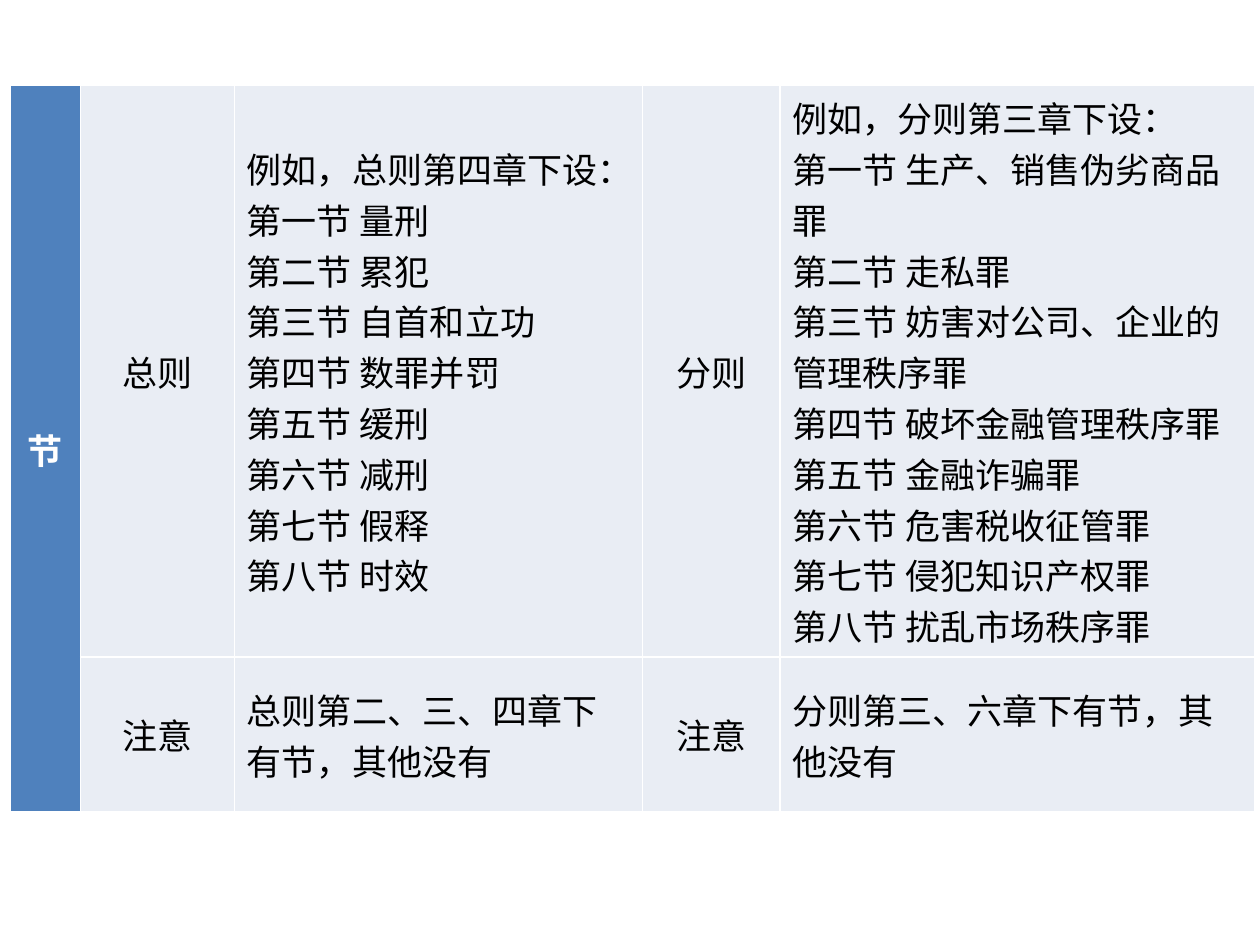
from lxml.etree import SubElement
from pptx import Presentation
from pptx.dml.color import RGBColor
from pptx.enum.text import MSO_ANCHOR, PP_ALIGN
from pptx.oxml.ns import qn
from pptx.util import Inches, Pt

FONT = "Noto Sans CJK SC"
COLORS = {"heading": "4F81BD", "body": "E9EDF4", "border": "FFFFFF",
          "heading_text": "FFFFFF", "body_text": "000000"}

# Content: each row is a list of cells, each cell a list of paragraphs
GENERAL_SECTIONS = [
    "例如，总则第四章下设：第一节 量刑",
    "第二节 累犯",
    "第三节 自首和立功",
    "第四节 数罪并罚",
    "第五节 缓刑",
    "第六节 减刑",
    "第七节 假释",
    "第八节 时效",
]
SPECIFIC_SECTIONS = [
    "例如，分则第三章下设：",
    "第一节 生产、销售伪劣商品罪",
    "第二节 走私罪",
    "第三节 妨害对公司、企业的管理秩序罪",
    "第四节 破坏金融管理秩序罪",
    "第五节 金融诈骗罪",
    "第六节 危害税收征管罪",
    "第七节 侵犯知识产权罪",
    "第八节 扰乱市场秩序罪",
]
ROWS = [
    [["节"], ["总则"], GENERAL_SECTIONS, ["分则"], SPECIFIC_SECTIONS],
    [None, ["注意"], ["总则第二、三、四章下有节，其他没有"],
     ["注意"], ["分则第三、六章下有节，其他没有"]],
]
COLUMN_WIDTHS = [0.56, 1.22, 3.24, 1.09, 3.77]
ROW_HEIGHTS = [4.49, 1.23]
LIST_COLUMNS = (2, 4)


def add_borders(cell):
    properties = cell._tc.get_or_add_tcPr()
    for index, side in enumerate(("lnL", "lnR", "lnT", "lnB")):
        line = properties.makeelement(qn(f"a:{side}"), {"w": str(Pt(1))})
        fill = SubElement(line, qn("a:solidFill"))
        SubElement(fill, qn("a:srgbClr"), val=COLORS["border"])
        properties.insert(index, line)


def write_cell(cell, lines, column):
    role = "heading" if column == 0 else "body"
    cell.text = "\n".join(lines)
    cell.vertical_anchor = MSO_ANCHOR.MIDDLE
    cell.fill.solid()
    cell.fill.fore_color.rgb = RGBColor.from_string(COLORS[role])
    for paragraph in cell.text_frame.paragraphs:
        paragraph.alignment = PP_ALIGN.LEFT if column in LIST_COLUMNS else PP_ALIGN.CENTER
        font = paragraph.font
        font.size = Pt(20)
        font.bold = column == 0
        font.color.rgb = RGBColor.from_string(COLORS[role + "_text"])
        font.name = FONT
        # Chinese text takes the East Asian typeface
        defaults = paragraph._p.pPr.find(qn("a:defRPr"))
        SubElement(defaults, qn("a:ea"), typeface=FONT)


prs = Presentation()
prs.slide_width, prs.slide_height = Inches(10), Inches(7.5)
slide = prs.slides.add_slide(prs.slide_layouts[6])

# Table of sections
sections = slide.shapes.add_table(
    len(ROWS), len(COLUMN_WIDTHS), Inches(0.08), Inches(0.68),
    Inches(sum(COLUMN_WIDTHS)), Inches(sum(ROW_HEIGHTS))).table
sections.first_row = sections.horz_banding = False
for column, width in zip(sections.columns, COLUMN_WIDTHS):
    column.width = Inches(width)
for row, height in zip(sections.rows, ROW_HEIGHTS):
    row.height = Inches(height)
sections.cell(0, 0).merge(sections.cell(1, 0))

# Cells
for row_index, row in enumerate(ROWS):
    for column_index, lines in enumerate(row):
        cell = sections.cell(row_index, column_index)
        if lines:
            write_cell(cell, lines, column_index)
        add_borders(cell)

prs.save("out.pptx")
